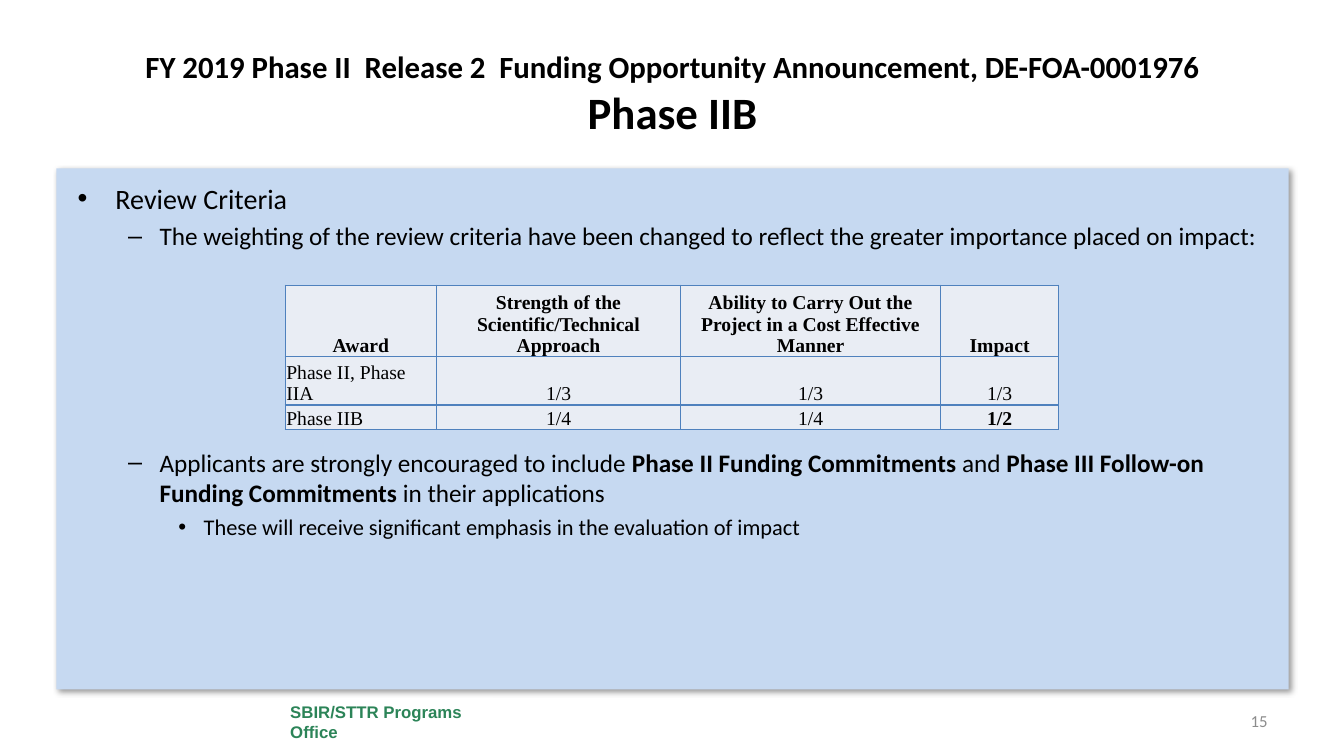
from lxml.etree import SubElement
from pptx import Presentation
from pptx.dml.color import RGBColor
from pptx.enum.shapes import MSO_SHAPE
from pptx.enum.text import MSO_ANCHOR, MSO_AUTO_SIZE, PP_ALIGN
from pptx.oxml import parse_xml
from pptx.oxml.ns import nsdecls, qn
from pptx.util import Inches, Pt

BLACK = RGBColor(0x00, 0x00, 0x00)
WHITE = RGBColor(0xFF, 0xFF, 0xFF)
PANEL_BLUE = RGBColor(0xC6, 0xD9, 0xF1)
CELL_GREY = RGBColor(0xE9, 0xED, 0xF4)
BORDER_BLUE = RGBColor(0x4F, 0x81, 0xBD)
OFFICE_GREEN = RGBColor(0x2C, 0x84, 0x58)
NUMBER_GREY = RGBColor(0x8C, 0x8C, 0x8C)

TITLE = [
    ("FY 2019 Phase II  Release 2  Funding Opportunity Announcement, DE-FOA-0001976", 22),
    ("Phase IIB", 32),
]
BULLETS = [
    (0, 20, 0, [("Review Criteria", False)]),
    (1, 18, 4, [("The weighting of the review criteria have been changed to reflect "
                 "the greater importance placed on impact:", False)]),
    (1, 18, 140, [("Applicants are strongly encouraged to include ", False),
                  ("Phase II Funding Commitments ", True),
                  ("and ", False),
                  ("Phase III Follow-on Funding Commitments ", True),
                  ("in their applications", False)]),
    (2, 16, 4, [("These will receive significant emphasis in the evaluation of impact", False)]),
]
CRITERIA = [
    ["Award", "Strength of the Scientific/Technical Approach",
     "Ability to Carry Out the Project in a Cost Effective Manner", "Impact"],
    ["Phase II, Phase IIA", "1/3", "1/3", "1/3"],
    ["Phase IIB", "1/4", "1/4", "1/2"],
]
COLUMN_WIDTHS = [1.5, 2.42, 2.58, 1.17]
ROW_HEIGHTS = [0.65, 0.44, 0.22]


class SlideBuilder:
    font = "Calibri"
    table_font = "Times New Roman"
    footer_font = "Arial"

    def __init__(self, deck):
        self.page = deck.slides.add_slide(deck.slide_layouts[1])

    def place(self, shape, left, top, width, height):
        shape.left, shape.top = Inches(left), Inches(top)
        shape.width, shape.height = Inches(width), Inches(height)
        shape.text_frame.auto_size = MSO_AUTO_SIZE.NONE
        shape.text_frame.word_wrap = True

    def span(self, para, text, size, bold=False, color=BLACK, font=None):
        span = para.add_run()
        span.text = text
        span.font.name = font or self.font
        span.font.size = Pt(size)
        span.font.bold = bold
        span.font.color.rgb = color

    def rectangle(self, left, top, width, height, color):
        box = self.page.shapes.add_shape(
            MSO_SHAPE.RECTANGLE, Inches(left), Inches(top), Inches(width), Inches(height))
        box.shadow.inherit = False
        box.fill.solid()
        box.fill.fore_color.rgb = color
        box.line.fill.background()
        return box

    def panel(self, left, top, width, height):
        box = self.rectangle(left, top, width, height, PANEL_BLUE)
        effects = box.element.spPr.find(qn("a:effectLst"))
        effects.append(parse_xml(
            f'<a:outerShdw {nsdecls("a")} blurRad="{Pt(4)}" dist="{Pt(3)}" dir="2700000" '
            f'algn="tl" rotWithShape="0"><a:srgbClr val="{BLACK}">'
            '<a:alpha val="40000"/></a:srgbClr></a:outerShdw>'))
        self.page.shapes.title.element.addprevious(box.element)

    def title(self, lines, *bounds):
        box = self.page.shapes.title
        self.place(box, *bounds)
        box.text_frame.vertical_anchor = MSO_ANCHOR.MIDDLE
        para = box.text_frame.paragraphs[0]
        para.alignment = PP_ALIGN.CENTER
        for index, (text, size) in enumerate(lines):
            if index:
                para.add_line_break()
            self.span(para, text, size, True)

    def bullets(self, items, *bounds):
        box = self.page.placeholders[1]
        self.place(box, *bounds)
        frame = box.text_frame
        for index, (level, size, before, spans) in enumerate(items):
            para = frame.add_paragraph() if index else frame.paragraphs[0]
            para.level = level
            para.space_before = Pt(before)
            for text, bold in spans:
                self.span(para, text, size, bold)

    def footer(self, text, *bounds):
        box = self.rectangle(*bounds, WHITE)
        box.text_frame.word_wrap = True
        box.text_frame.vertical_anchor = MSO_ANCHOR.MIDDLE
        para = box.text_frame.paragraphs[0]
        para.alignment = PP_ALIGN.LEFT
        self.span(para, text, 12, True, OFFICE_GREEN, self.footer_font)

    def page_number(self, text, *bounds):
        box = self.page.shapes.add_textbox(*map(Inches, bounds))
        box.text_frame.word_wrap = True
        box.text_frame.vertical_anchor = MSO_ANCHOR.MIDDLE
        para = box.text_frame.paragraphs[0]
        para.alignment = PP_ALIGN.RIGHT
        self.span(para, text, 12, color=NUMBER_GREY)

    def cell(self, cell, text, bold, alignment):
        cell.margin_left = cell.margin_right = cell.margin_top = Inches(0.01)
        cell.margin_bottom = 0
        cell.vertical_anchor = MSO_ANCHOR.BOTTOM
        para = cell.text_frame.paragraphs[0]
        para.alignment = alignment
        self.span(para, text, 14, bold, font=self.table_font)
        properties = cell._tc.get_or_add_tcPr()
        for side in ("a:lnL", "a:lnR", "a:lnT", "a:lnB"):
            line = SubElement(properties, qn(side), w=str(Pt(1)))
            fill = SubElement(line, qn("a:solidFill"))
            SubElement(fill, qn("a:srgbClr"), val=str(BORDER_BLUE))
        cell.fill.solid()
        cell.fill.fore_color.rgb = CELL_GREY

    def table(self, rows, left, top, widths, heights):
        table = self.page.shapes.add_table(
            len(rows), len(widths), Inches(left), Inches(top),
            Inches(sum(widths)), Inches(sum(heights))).table
        for column, width in zip(table.columns, widths):
            column.width = Inches(width)
        for row, height in zip(table.rows, heights):
            row.height = Inches(height)
        for row_index, row in enumerate(rows):
            for column_index, text in enumerate(row):
                bold = row_index == 0 or text == "1/2"
                label = row_index > 0 and column_index == 0
                alignment = PP_ALIGN.LEFT if label else PP_ALIGN.CENTER
                self.cell(table.cell(row_index, column_index), text, bold, alignment)


def main():
    deck = Presentation()
    deck.slide_width, deck.slide_height = Inches(13.33), Inches(7.5)
    builder = SlideBuilder(deck)
    builder.panel(0.56, 1.67, 12.22, 5.17)
    builder.footer("SBIR/STTR Programs Office", 2.78, 6.92, 2.11, 0.48)
    builder.title(TITLE, 0.67, 0.3, 12, 1.25)
    builder.bullets(BULLETS, 0.67, 1.75, 12, 4.95)
    builder.page_number("15", 10.56, 6.95, 2.11, 0.4)
    builder.table(CRITERIA, 2.83, 2.83, COLUMN_WIDTHS, ROW_HEIGHTS)
    deck.save("out.pptx")


if __name__ == "__main__":
    main()
